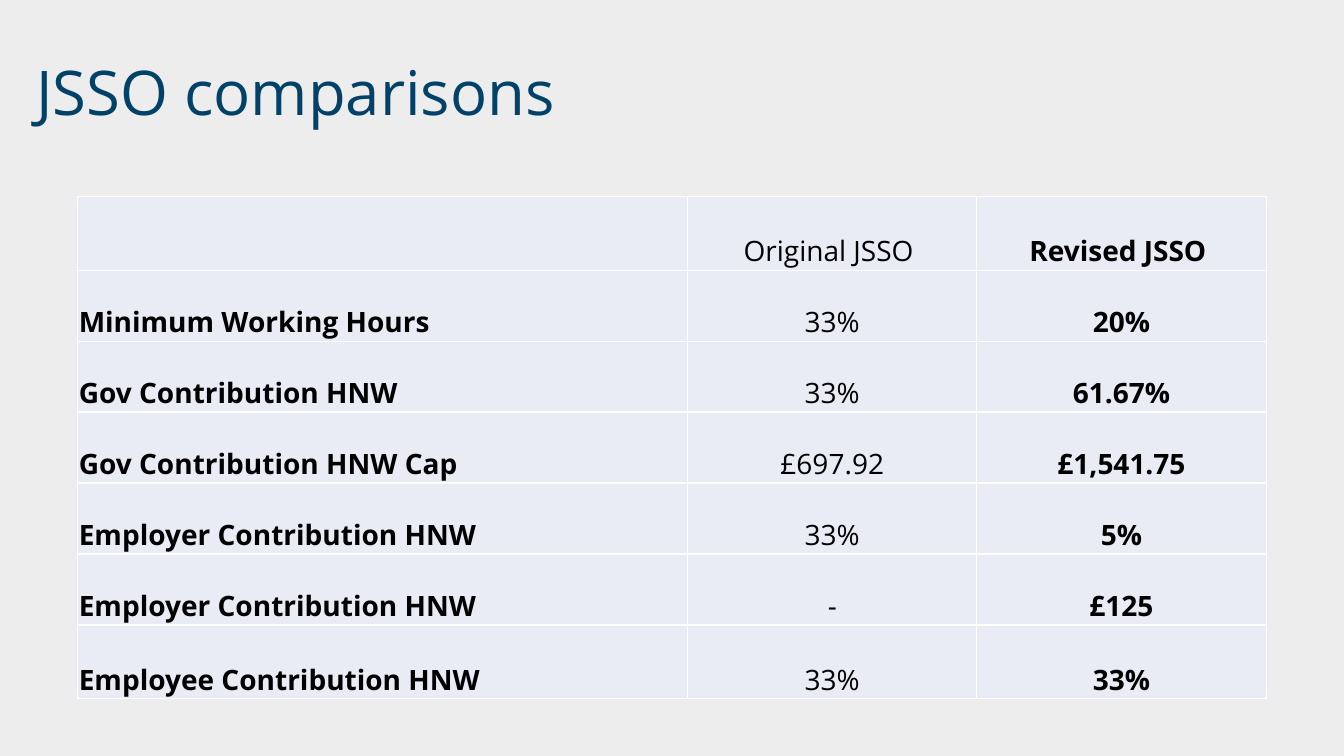
from lxml.etree import SubElement
from pptx import Presentation
from pptx.dml.color import RGBColor
from pptx.enum.text import MSO_ANCHOR, PP_ALIGN
from pptx.oxml.ns import qn
from pptx.util import Pt

FONT = "Open Sans"
COLORS = {
    "background": "EDEDED",
    "title": "024268",
    "text": "000000",
    "cell": "E9EBF5",
    "border": "FFFFFF",
}
COLUMN_WIDTHS = [435.6, 206.6, 206.6]
END_ROW_HEIGHT = 52.6
ROW_HEIGHT = 50.7
ROWS = [
    ["", "Original JSSO ", "Revised JSSO "],
    ["Minimum Working Hours", "33%", "20%"],
    ["Gov Contribution HNW", "33%", "61.67%"],
    ["Gov Contribution HNW Cap", "£697.92", "£1,541.75"],
    ["Employer Contribution HNW", "33%", "5%"],
    ["Employer Contribution HNW", "-", "£125"],
    ["Employee Contribution HNW", "33%", "33%"],
]


def color(name):
    return RGBColor.from_string(COLORS[name])


def style_font(font, size, color_name, bold=False):
    font.name = FONT
    font.size = Pt(size)
    font.bold = bold
    font.color.rgb = color(color_name)


def add_title(slide, text):
    title = slide.shapes.title
    title.left, title.top = Pt(18.7), Pt(27.4)
    title.width, title.height = Pt(769), Pt(68.4)
    frame = title.text_frame
    frame.text = text
    frame.vertical_anchor = MSO_ANCHOR.BOTTOM
    paragraph = frame.paragraphs[0]
    paragraph.alignment = PP_ALIGN.LEFT
    paragraph.line_spacing = 0.9
    style_font(paragraph.font, 44, "title")


def add_borders(cell):
    properties = cell._tc.get_or_add_tcPr()
    for side in ("a:lnL", "a:lnR", "a:lnT", "a:lnB"):
        line = SubElement(properties, qn(side), w=str(Pt(1)))
        fill = SubElement(line, qn("a:solidFill"))
        SubElement(fill, qn("a:srgbClr"), val=COLORS["border"])


def fill_cell(cell, text, column):
    add_borders(cell)
    cell.fill.solid()
    cell.fill.fore_color.rgb = color("cell")
    cell.margin_left = cell.margin_right = cell.margin_top = Pt(0.7)
    cell.margin_bottom = Pt(0)
    cell.vertical_anchor = MSO_ANCHOR.BOTTOM
    cell.text = text
    paragraph = cell.text_frame.paragraphs[0]
    paragraph.alignment = PP_ALIGN.CENTER if column else PP_ALIGN.LEFT
    style_font(paragraph.font, 20, "text", bold=column != 1)


def add_comparison_table(slide):
    heights = [END_ROW_HEIGHT] + [ROW_HEIGHT] * (len(ROWS) - 2) + [END_ROW_HEIGHT]
    table = slide.shapes.add_table(
        len(ROWS), len(COLUMN_WIDTHS),
        Pt(55.6), Pt(140.4), Pt(sum(COLUMN_WIDTHS)), Pt(sum(heights)),
    ).table
    table.first_row = False
    table.horz_banding = False
    for column, width in zip(table.columns, COLUMN_WIDTHS):
        column.width = Pt(width)
    for row, height, texts in zip(table.rows, heights, ROWS):
        row.height = Pt(height)
        for index, text in enumerate(texts):
            fill_cell(row.cells[index], text, index)


def main():
    presentation = Presentation()
    presentation.slide_width, presentation.slide_height = Pt(960), Pt(540)
    slide = presentation.slides.add_slide(presentation.slide_layouts.get_by_name("Title Only"))
    slide.background.fill.solid()
    slide.background.fill.fore_color.rgb = color("background")
    add_title(slide, "JSSO comparisons")
    add_comparison_table(slide)
    presentation.save("out.pptx")


if __name__ == "__main__":
    main()
